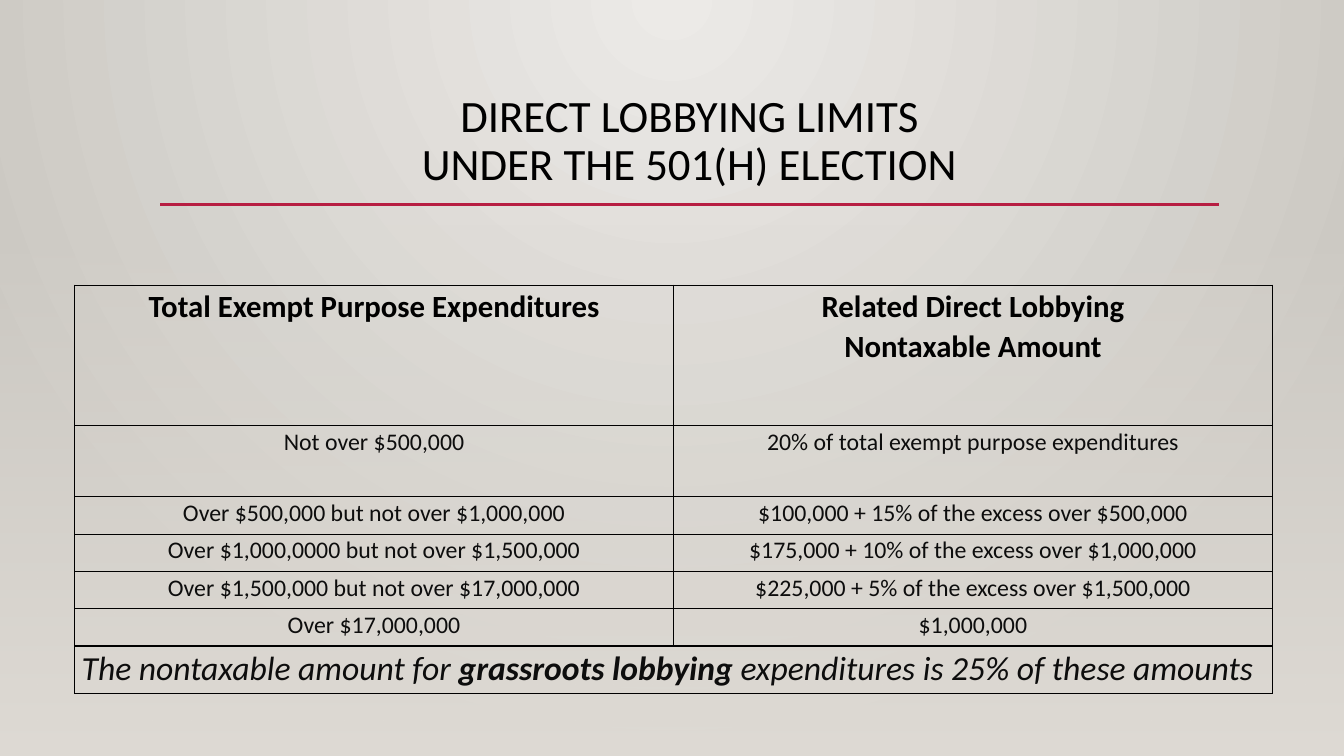
from dataclasses import dataclass

from lxml.etree import SubElement
from pptx import Presentation
from pptx.dml.color import RGBColor
from pptx.dml.fill import FillFormat
from pptx.enum.shapes import MSO_CONNECTOR, MSO_SHAPE
from pptx.enum.text import MSO_ANCHOR, PP_ALIGN
from pptx.oxml import parse_xml
from pptx.oxml.ns import nsdecls, qn
from pptx.oxml.xmlchemy import BaseOxmlElement
from pptx.shapes.autoshape import Shape
from pptx.slide import Slide
from pptx.table import _Cell
from pptx.text.text import _Paragraph
from pptx.util import Inches, Pt

FONT = "Calibri"
BLACK = RGBColor(0x00, 0x00, 0x00)
INK = RGBColor(0x0D, 0x0D, 0x0D)
CRIMSON = RGBColor(0xB7, 0x1E, 0x42)
PALE = RGBColor(0xEC, 0xEA, 0xE7)
STONE = RGBColor(0xCA, 0xC7, 0xC1)
SAND = RGBColor(0xDF, 0xDB, 0xD5)

PAGE_WIDTH, PAGE_HEIGHT = 13.33, 7.5
RULE_LEFT, RULE_RIGHT, RULE_TOP = 1.59, 12.09, 2.03
PANEL_TOP = 2.21
COLUMN_WIDTH = 5.94


@dataclass
class LimitRow:
    height: float
    expenditures: str
    nontaxable: str
    size: int = 17
    bold: bool = False
    color: RGBColor = INK


@dataclass
class NoteSpan:
    text: str
    bold: bool = False


LIMITS = [
    LimitRow(1.39, "Total Exempt Purpose Expenditures",
             "Related Direct Lobbying\nNontaxable Amount", 22, True, BLACK),
    LimitRow(0.71, "Not over $500,000", "20% of total exempt purpose expenditures"),
    LimitRow(0.37, "Over $500,000 but not over $1,000,000",
             "$100,000 + 15% of the excess over $500,000"),
    LimitRow(0.37, "Over $1,000,0000 but not over $1,500,000",
             "$175,000 + 10% of the excess over $1,000,000"),
    LimitRow(0.37, "Over $1,500,000 but not over $17,000,000",
             "$225,000 + 5% of the excess over $1,500,000"),
    LimitRow(0.37, "Over $17,000,000", "$1,000,000"),
]
NOTE_HEIGHT = 0.47
NOTE = [
    NoteSpan("The nontaxable amount for "),
    NoteSpan("grassroots lobbying ", True),
    NoteSpan("expenditures is 25% of these amounts"),
]


def set_stops(fill: FillFormat, first: RGBColor, last: RGBColor) -> None:
    fill.gradient()
    for stop, color in zip(fill.gradient_stops, (first, last)):
        stop.color.rgb = color


def apply_glow(fill: FillFormat, owner: BaseOxmlElement) -> None:
    """Fill with a circular gradient centred on the top edge."""
    set_stops(fill, PALE, STONE)
    gradient = owner.find(".//" + qn("a:gradFill"))
    gradient.remove(gradient.find(qn("a:lin")))
    circle = SubElement(gradient, qn("a:path"), path="circle")
    SubElement(circle, qn("a:fillToRect"), l="43000", t="0", r="43000", b="100000")


def add_band(page: Slide, top: float) -> Shape:
    """Add a full-width rectangle that reaches the bottom of the page."""
    band = page.shapes.add_shape(MSO_SHAPE.RECTANGLE, 0, Inches(top),
                                 Inches(PAGE_WIDTH), Inches(PAGE_HEIGHT - top))
    band.shadow.inherit = False
    band.line.fill.background()
    return band


def add_backdrop(page: Slide) -> None:
    apply_glow(page.background.fill, page.background._cSld)
    glow = add_band(page, 0)
    apply_glow(glow.fill, glow._element)


def add_fading_panel(page: Slide) -> None:
    panel = add_band(page, PANEL_TOP)
    set_stops(panel.fill, SAND, SAND)
    panel.fill.gradient_angle = 270
    clear_stop = panel._element.find(".//" + qn("a:gs")).find(qn("a:srgbClr"))
    SubElement(clear_stop, qn("a:alpha"), val="0")


def style_para(para: _Paragraph, size: int, color: RGBColor) -> None:
    para.font.name = FONT
    para.font.size = Pt(size)
    para.font.color.rgb = color


def add_title(page: Slide) -> None:
    box = page.shapes.add_textbox(Inches(RULE_LEFT), Inches(0.88),
                                  Inches(RULE_RIGHT - RULE_LEFT), Inches(1.15))
    frame = box.text_frame
    frame.word_wrap = True
    frame.vertical_anchor = MSO_ANCHOR.TOP
    para = frame.paragraphs[0]
    para.text = "DIRECT LOBBYING LIMITS\vUNDER THE 501(H) ELECTION"
    para.alignment = PP_ALIGN.CENTER
    para.line_spacing = 0.9
    style_para(para, 32, BLACK)


def add_title_rule(page: Slide) -> None:
    rule = page.shapes.add_connector(MSO_CONNECTOR.STRAIGHT, Inches(RULE_LEFT), Inches(RULE_TOP),
                                     Inches(RULE_RIGHT), Inches(RULE_TOP))
    rule.line.color.rgb = CRIMSON
    rule.line.width = Pt(2.5)
    SubElement(rule._element.spPr, qn("a:effectLst"))


def style_cell(cell: _Cell) -> None:
    """Clear the cell's fill, tighten its margins and border all four sides."""
    cell.margin_left = cell.margin_right = Inches(0.07)
    cell.margin_top = cell.margin_bottom = 0
    cell.fill.background()
    properties = cell._tc.get_or_add_tcPr()
    for index, side in enumerate(("lnL", "lnR", "lnT", "lnB")):
        properties.insert(index, parse_xml(
            f'<a:{side} {nsdecls("a")} w="{Pt(1)}"><a:solidFill>'
            f'<a:srgbClr val="{BLACK}"/></a:solidFill></a:{side}>'))


def fill_limit_cell(cell: _Cell, text: str, row: LimitRow) -> None:
    cell.text = text
    for para in cell.text_frame.paragraphs:
        para.alignment = PP_ALIGN.CENTER
        para.line_spacing = 1.07
        style_para(para, row.size, row.color)
        para.font.bold = row.bold


def fill_note_cell(cell: _Cell) -> None:
    para = cell.text_frame.paragraphs[0]
    para.line_spacing = 1.07
    style_para(para, 24, INK)
    para.font.italic = True
    for part in NOTE:
        span = para.add_run()
        span.text = part.text
        span.font.bold = part.bold


def add_limits_table(page: Slide) -> None:
    heights = [row.height for row in LIMITS] + [NOTE_HEIGHT]
    table = page.shapes.add_table(len(heights), 2, Inches(0.74), Inches(2.83),
                                  Inches(2 * COLUMN_WIDTH), Inches(sum(heights))).table
    table.first_row = table.horz_banding = False
    for column in table.columns:
        column.width = Inches(COLUMN_WIDTH)
    for table_row, height in zip(table.rows, heights):
        table_row.height = Inches(height)
    for cell in table.iter_cells():
        style_cell(cell)
    for index, row in enumerate(LIMITS):
        fill_limit_cell(table.cell(index, 0), row.expenditures, row)
        fill_limit_cell(table.cell(index, 1), row.nontaxable, row)
    note_index = len(LIMITS)
    table.cell(note_index, 0).merge(table.cell(note_index, 1))
    fill_note_cell(table.cell(note_index, 0))


def main() -> None:
    deck = Presentation()
    deck.slide_width, deck.slide_height = Inches(PAGE_WIDTH), Inches(PAGE_HEIGHT)
    page = deck.slides.add_slide(deck.slide_layouts[6])
    add_backdrop(page)
    add_title(page)
    add_title_rule(page)
    add_fading_panel(page)
    add_limits_table(page)
    deck.save("out.pptx")


if __name__ == "__main__":
    main()
